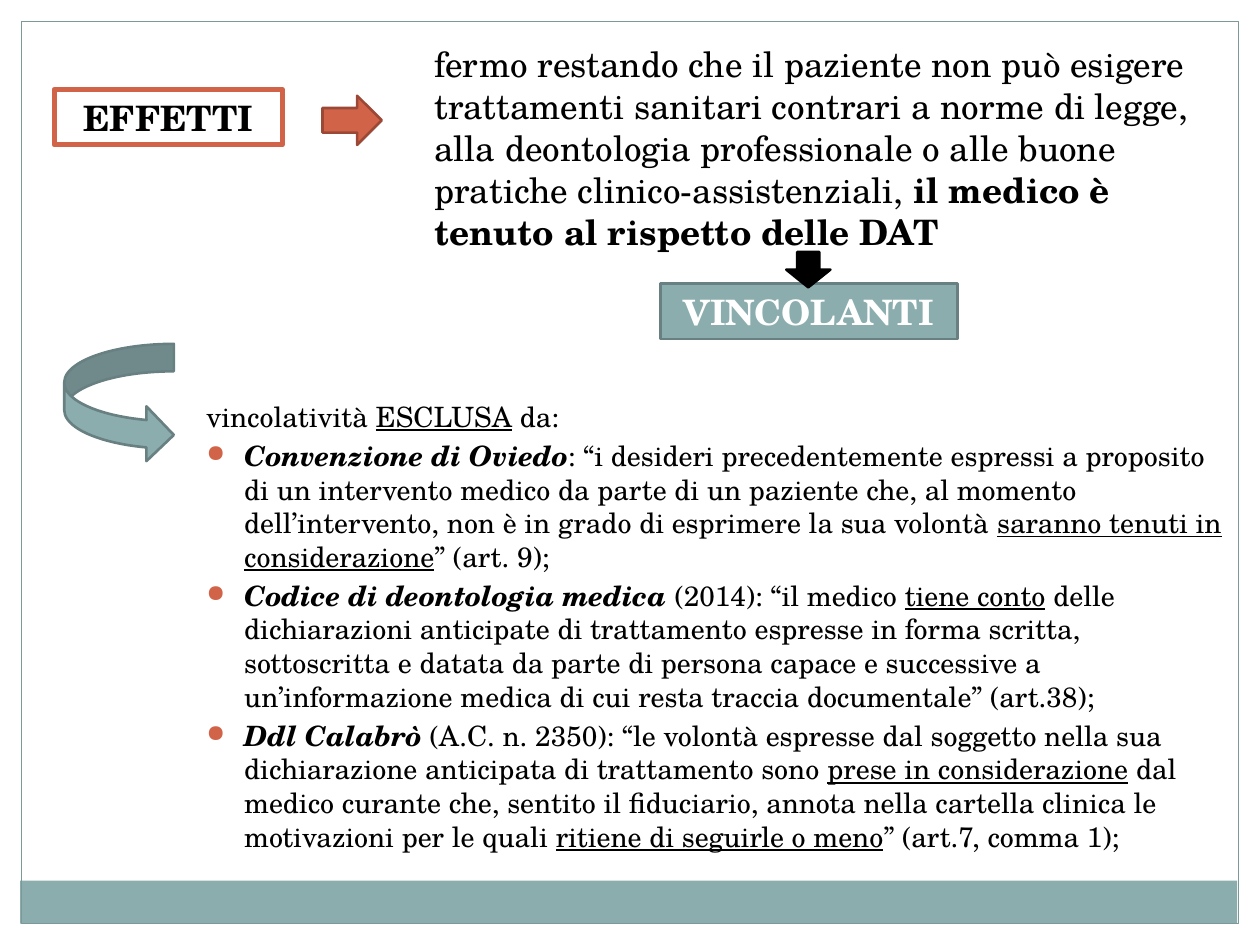
from dataclasses import dataclass

import pptx
import pptx.dml.color
import pptx.enum.shapes
import pptx.enum.text
import pptx.oxml.ns
import pptx.util
from lxml import etree

SHAPES = pptx.enum.shapes.MSO_SHAPE
ALIGN = pptx.enum.text.PP_ALIGN
ANCHOR = pptx.enum.text.MSO_ANCHOR

FONT = "TeX Gyre Schola"
BLACK, WHITE = "000000", "FFFFFF"
TEAL, TEAL_DARK, FRAME_LINE = "8CADAE", "688081", "7C999A"
RED, RED_DARK = "D16349", "9B4936"

SLIDE_WIDTH = pptx.util.Inches(10)
SLIDE_HEIGHT = pptx.util.Inches(7.5)
COLUMNS, ROWS = 100, 75
INDENT = pptx.util.Inches(0.3)


@dataclass(frozen=True)
class Box:
    """A place on the slide, in columns and rows of the grid."""
    column: float
    row: float
    columns: float
    rows: float


@dataclass(frozen=True)
class Block:
    preset: pptx.enum.shapes.MSO_SHAPE
    box: Box
    fill: str | None
    line: str | None
    line_width: float = 1.5
    label: str = ""


@dataclass(frozen=True)
class Span:
    """Text with style letters: b for bold, i for italic, u for underlined."""
    text: str
    style: str = ""


TITLE_BOX = Box(4.3, 7.1, 18.1, 4.4)
RULE_BOX = Box(33.5, 2.9, 64.6, 17.8)
EXCLUSIONS_BOX = Box(15.4, 31.2, 82.7, 39.4)

BLOCKS = [
    Block(SHAPES.RECTANGLE, Box(1.6, 69.9, 96.6, 3.4), TEAL, None),
    Block(SHAPES.RECTANGLE, Box(1.7, 1.7, 96.6, 71.6), None, FRAME_LINE, 0.75),
    Block(SHAPES.RIGHT_ARROW, Box(25.6, 7.6, 4.7, 3.9), RED, RED_DARK),
    Block(SHAPES.RECTANGLE, Box(52.4, 22.5, 23.6, 4.4), TEAL, TEAL_DARK, label="VINCOLANTI"),
    Block(SHAPES.DOWN_ARROW, Box(62.4, 20, 3.5, 2.8), BLACK, BLACK),
    Block(SHAPES.CURVED_RIGHT_ARROW, Box(5.1, 27.3, 8.7, 9.4), TEAL, TEAL_DARK),
]

RULE = [
    Span("fermo restando che il paziente non può esigere trattamenti sanitari contrari a norme "
         "di legge, alla deontologia professionale o alle buone pratiche clinico-assistenziali, "),
    Span("il medico è tenuto al rispetto delle DAT", "b"),
]

EXCLUSIONS_HEADING = [Span("vincolatività "), Span("ESCLUSA", "u"), Span(" da:")]

EXCLUSIONS = [
    [
        Span("Convenzione di Oviedo", "bi"),
        Span(": “i desideri precedentemente espressi a proposito di un intervento medico da parte "
             "di un paziente che, al momento dell’intervento, non è in grado di esprimere la sua "
             "volontà "),
        Span("saranno tenuti in considerazione", "u"),
        Span("” (art. 9);"),
    ],
    [
        Span("Codice di deontologia medica ", "bi"),
        Span("(2014): “il medico "),
        Span("tiene conto", "u"),
        Span(" delle dichiarazioni anticipate di trattamento espresse in forma scritta, "
             "sottoscritta e datata da parte di persona capace e successive a un’informazione "
             "medica di cui resta traccia documentale” (art.38);"),
    ],
    [
        Span("Ddl Calabrò ", "bi"),
        Span("(A.C. n. 2350): “le volontà espresse dal soggetto nella sua dichiarazione "
             "anticipata di trattamento sono "),
        Span("prese in considerazione", "u"),
        Span(" dal medico curante che, sentito il fiduciario, annota nella cartella clinica le "
             "motivazioni per le quali "),
        Span("ritiene di seguirle o meno", "u"),
        Span("” (art.7, comma 1);"),
    ],
]


def color(value: str) -> pptx.dml.color.RGBColor:
    return pptx.dml.color.RGBColor.from_string(value)


def place(box: Box) -> tuple[int, int, int, int]:
    """Left, top, width and height of a box in EMU."""
    column, row = SLIDE_WIDTH / COLUMNS, SLIDE_HEIGHT / ROWS
    return (round(box.column * column), round(box.row * row),
            round(box.columns * column), round(box.rows * row))


def paint(shape, fill: str | None, line: str | None, line_width: float) -> None:
    if fill:
        shape.fill.solid()
        shape.fill.fore_color.rgb = color(fill)
    else:
        shape.fill.background()
    if line:
        shape.line.color.rgb = color(line)
        shape.line.width = pptx.util.Pt(line_width)
    else:
        shape.line.fill.background()


def format_run(run, size: float, text_color: str, style: str = "") -> None:
    run.font.name = FONT
    run.font.size = pptx.util.Pt(size)
    run.font.color.rgb = color(text_color)
    run.font.bold = "b" in style
    run.font.italic = "i" in style
    run.font.underline = "u" in style


def write_label(shape, text: str, text_color: str) -> None:
    text_frame = shape.text_frame
    text_frame.text = text
    text_frame.word_wrap = True
    text_frame.auto_size = pptx.enum.text.MSO_AUTO_SIZE.NONE
    text_frame.vertical_anchor = ANCHOR.MIDDLE
    paragraph = text_frame.paragraphs[0]
    paragraph.alignment = ALIGN.CENTER
    format_run(paragraph.runs[0], 20, text_color, "b")


def write_spans(paragraph, spans: list[Span], size: float) -> None:
    for span in spans:
        run = paragraph.add_run()
        run.text = span.text
        format_run(run, size, BLACK, span.style)


def add_block(slide, block: Block) -> None:
    shape = slide.shapes.add_shape(block.preset, *place(block.box))
    shape.shadow.inherit = False
    paint(shape, block.fill, block.line, block.line_width)
    if block.label:
        write_label(shape, block.label, WHITE)


def add_text_frame(slide, box: Box):
    text_frame = slide.shapes.add_textbox(*place(box)).text_frame
    text_frame.word_wrap = True
    return text_frame


def add_bullet(paragraph) -> None:
    properties = paragraph._p.get_or_add_pPr()
    properties.set("marL", str(INDENT))
    properties.set("indent", str(-INDENT))
    qn = pptx.oxml.ns.qn
    bullet_color = etree.SubElement(properties, qn("a:buClr"))
    etree.SubElement(bullet_color, qn("a:srgbClr"), val=RED)
    etree.SubElement(properties, qn("a:buSzPct"), val="85000")
    etree.SubElement(properties, qn("a:buChar"), char="●")


def add_exclusions(slide) -> None:
    text_frame = add_text_frame(slide, EXCLUSIONS_BOX)
    for index, spans in enumerate([EXCLUSIONS_HEADING, *EXCLUSIONS]):
        paragraph = text_frame.add_paragraph() if index else text_frame.paragraphs[0]
        paragraph.space_before = pptx.util.Pt(3.2)
        write_spans(paragraph, spans, 16)
        if index:
            add_bullet(paragraph)


def main() -> None:
    presentation = pptx.Presentation()
    presentation.slide_width, presentation.slide_height = SLIDE_WIDTH, SLIDE_HEIGHT
    slide = presentation.slides.add_slide(presentation.slide_layouts.get_by_name("Title Only"))

    title = slide.shapes.title
    title.left, title.top, title.width, title.height = place(TITLE_BOX)
    paint(title, WHITE, RED, 3)
    write_label(title, "EFFETTI", BLACK)

    for block in BLOCKS:
        add_block(slide, block)
    write_spans(add_text_frame(slide, RULE_BOX).paragraphs[0], RULE, 20)
    add_exclusions(slide)
    presentation.save("out.pptx")


if __name__ == "__main__":
    main()
